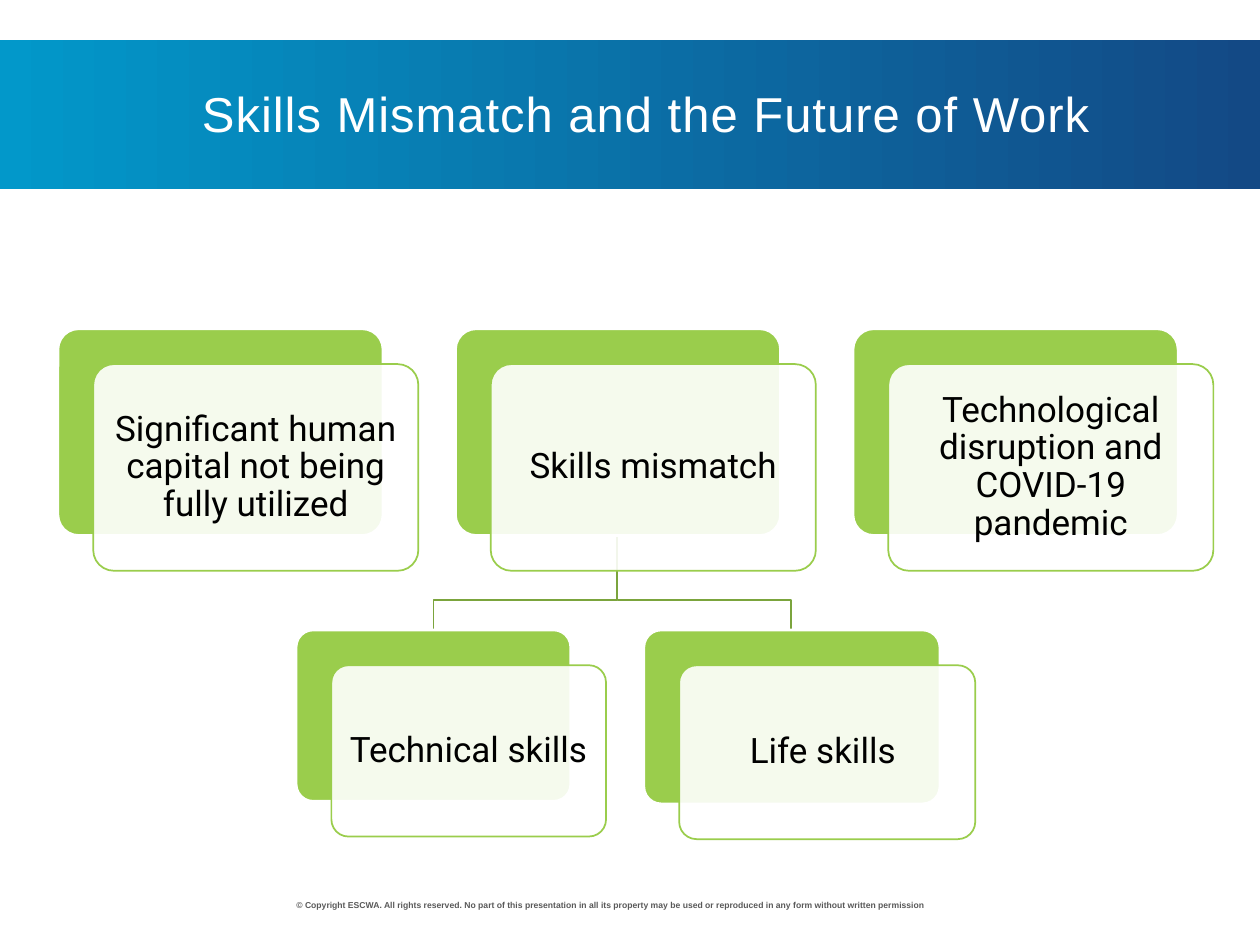
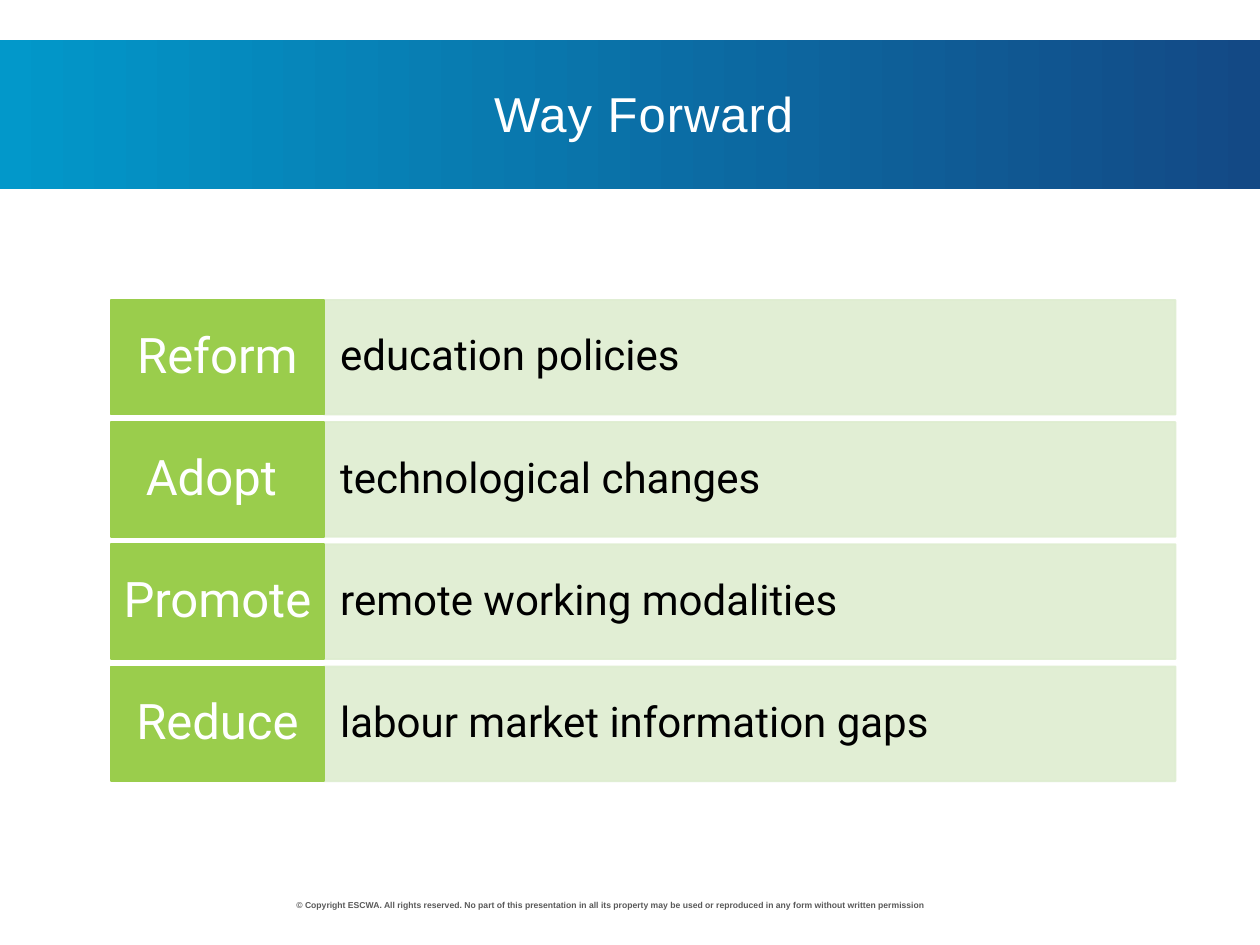
from lxml.etree import SubElement
from pptx import Presentation
from pptx.dml.color import RGBColor
from pptx.enum.shapes import MSO_SHAPE as Preset
from pptx.enum.text import MSO_ANCHOR as Anchor, MSO_AUTO_SIZE as AutoSize, PP_ALIGN as Align
from pptx.oxml.ns import qn
from pptx.util import Inches, Pt

WHITE, BLACK, GREY = "FFFFFF", "000000", "595959"
GREEN, DARK_GREEN, PALE_GREEN = "9ACD4C", "7BA43D", "DEEDD0"
BAND_START, BAND_END = "0298CA", "134985"
HEADING_FONT, BODY_FONT = "Arial", "Roboto"
COPYRIGHT = (
    "© Copyright ESCWA. All rights reserved. No part of this presentation in all its "
    "property may be used or reproduced in any form without written permission"
)
CARD_OFFSET = 0.28
ROW_HEIGHT, ROW_PITCH = 0.91, 0.97


def rgb(color):
    return RGBColor.from_string(color)


def apply_format(target, values):
    for name, value in values.items():
        setattr(target, name, value)


def box(left, top, width, height):
    return [Inches(length) for length in (left, top, width, height)]


def set_alpha(solid_fill, percent):
    SubElement(solid_fill[0], qn("a:alpha"), val=str(percent * 1000))


def write(shape, text, font, size, color, bold=False, align=Align.CENTER,
          anchor=Anchor.MIDDLE, spacing=0.9, insets=(0.1, 0.05)):
    frame = shape.text_frame
    across, down = map(Inches, insets)
    apply_format(frame, {
        "word_wrap": True, "auto_size": AutoSize.NONE, "vertical_anchor": anchor,
        "margin_left": across, "margin_right": across,
        "margin_top": down, "margin_bottom": down,
    })
    paragraph = frame.paragraphs[0]
    apply_format(paragraph, {"alignment": align, "line_spacing": spacing})
    run = paragraph.add_run()
    run.text = text
    apply_format(run.font, {"name": font, "size": Pt(size), "bold": bold})
    run.font.color.rgb = rgb(color)
    return run


def add_panel(slide, preset, place, fill, line, weight=1, fill_alpha=None, line_alpha=None):
    panel = slide.shapes.add_shape(preset, *box(*place))
    panel.shadow.inherit = False
    panel.fill.solid()
    panel.fill.fore_color.rgb = rgb(fill)
    panel.line.color.rgb = rgb(line)
    panel.line.width = Pt(weight)
    properties = panel.element.spPr
    if fill_alpha:
        set_alpha(properties.find(qn("a:solidFill")), fill_alpha)
    if line_alpha:
        set_alpha(properties.find(qn("a:ln")).find(qn("a:solidFill")), line_alpha)
    return panel


def add_band(slide):
    band = slide.shapes.add_shape(Preset.RECTANGLE, *box(0, 0.32, 10, 1.18))
    band.shadow.inherit = False
    band.line.fill.background()
    band.fill.gradient()
    band.fill.gradient_angle = 0
    for stop, color in zip(band.fill.gradient_stops, (BAND_START, BAND_END)):
        stop.color.rgb = rgb(color)
    slide.shapes.title.element.addprevious(band.element)


def add_titled_slide(deck, heading, width, height):
    slide = deck.slides.add_slide(deck.slide_layouts[5])
    add_band(slide)
    title = slide.shapes.title
    place = box(0.88, 0.61, width, height)
    apply_format(title, dict(zip(("left", "top", "width", "height"), place)))
    run = write(title, heading, HEADING_FONT, 28, WHITE, anchor=Anchor.TOP, spacing=1.0)
    run.font._element.set("spc", "60")
    footer = slide.shapes.add_textbox(*box(1.94, 7.09, 5.81, 0.18))
    write(footer, COPYRIGHT, HEADING_FONT, 4.9, GREY, bold=True,
          anchor=Anchor.TOP, spacing=1.0)
    return slide


def add_branch(slide, start_x, end_x):
    start_y, bend_y, end_y = 4.25, 4.76, 5
    builder = slide.shapes.build_freeform(Inches(start_x), Inches(start_y))
    corners = [(start_x, bend_y), (end_x, bend_y), (end_x, end_y)]
    builder.add_line_segments([(Inches(x), Inches(y)) for x, y in corners], close=False)
    branch = builder.convert_to_shape()
    branch.shadow.inherit = False
    branch.fill.background()
    branch.line.color.rgb = rgb(DARK_GREEN)
    branch.line.width = Pt(1)


def add_card(slide, label, left, top, width, height):
    back = add_panel(slide, Preset.ROUNDED_RECTANGLE, (left, top, width, height),
                     GREEN, WHITE, weight=1.5)
    front_place = (left + CARD_OFFSET, top + CARD_OFFSET, width, height)
    front = add_panel(slide, Preset.ROUNDED_RECTANGLE, front_place,
                      WHITE, GREEN, fill_alpha=90)
    for card in (back, front):
        card.adjustments[0] = 0.1
    write(front, label, BODY_FONT, 20, BLACK, insets=(0.08, 0.08))


def add_action_row(slide, action, goal, top):
    goal_cell = add_panel(slide, Preset.RECTANGLE, (2.57, top, 6.76, ROW_HEIGHT),
                          PALE_GREEN, PALE_GREEN, fill_alpha=90, line_alpha=90)
    write(goal_cell, goal, BODY_FONT, 24, BLACK, align=Align.LEFT, insets=(0.13, 0.23))
    action_cell = add_panel(slide, Preset.RECTANGLE, (0.88, top, 1.69, ROW_HEIGHT),
                            GREEN, GREEN)
    write(action_cell, action, BODY_FONT, 28, WHITE, insets=(0.09, 0.09))


def build_mismatch(deck):
    slide = add_titled_slide(deck, "Skills Mismatch and the Future of Work", 8.5, 0.61)
    for end_x in (6.28, 3.44):
        add_branch(slide, 4.9, end_x)
    challenges = (
        "Significant human capital not being fully utilized",
        "Skills mismatch",
        "Technological disruption and COVID-19 pandemic",
    )
    for column, challenge in enumerate(challenges):
        add_card(slide, challenge, 0.46 + column * 6.31 / 2, 2.61, 2.58, 1.64)
    add_card(slide, "Technical skills", 2.35, 5, 2.18, 1.36)
    add_card(slide, "Life skills ", 5.11, 5, 2.35, 1.38)


def build_way_forward(deck):
    slide = add_titled_slide(deck, "Way Forward", 8.46, 0.69)
    actions = (
        ("Reform", "education policies"),
        ("Adopt ", "technological changes"),
        ("Promote", "remote working modalities"),
        ("Reduce", "labour market information gaps"),
    )
    for row, (action, goal) in enumerate(actions):
        add_action_row(slide, action, goal, 2.38 + row * ROW_PITCH)


def main():
    deck = Presentation()
    apply_format(deck, {"slide_width": Inches(10), "slide_height": Inches(7.5)})
    build_mismatch(deck)
    build_way_forward(deck)
    deck.save("out.pptx")


if __name__ == "__main__":
    main()
